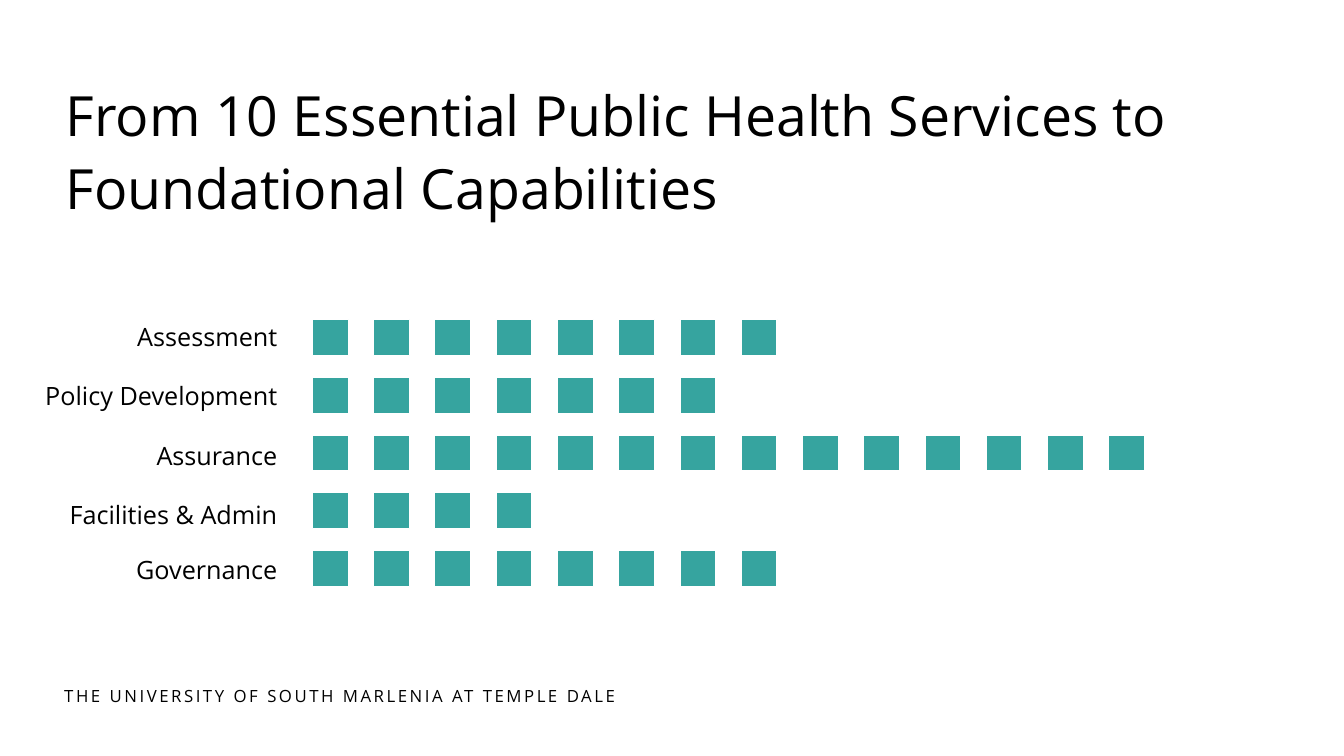
import pptx
import pptx.util
import pptx.dml.color
import pptx.enum.shapes
import pptx.enum.text

Cm = pptx.util.Cm
Pt = pptx.util.Pt
ALIGN = pptx.enum.text.PP_ALIGN
ANCHOR = pptx.enum.text.MSO_ANCHOR

COLORS = {"ink": "000000", "teal": "36A49F", "white": "FFFFFF"}
FONT = "Open Sans"

# label, number of squares, top of the label in cm
ROWS = [
    ("Assessment", 8, 7.98),
    ("Policy Development", 7, 9.47),
    ("Assurance", 14, 10.97),
    ("Facilities & Admin", 4, 12.45),
    ("Governance", 8, 13.84),
]
LEFT, TOP, SIDE = 7.87, 8.05, 0.91
STEP_X = 20.07 / 13
STEP_Y = 5.82 / 4


def color(name):
    return pptx.dml.color.RGBColor.from_string(COLORS[name])


def write(frame, text, size=18, align=ALIGN.LEFT, anchor=ANCHOR.TOP,
          leading=1.0, track=None):
    """Fill a text frame; track is the letter spacing in points."""
    frame.word_wrap = True
    frame.auto_size = pptx.enum.text.MSO_AUTO_SIZE.NONE
    frame.vertical_anchor = anchor
    par = frame.paragraphs[0]
    par.alignment = align
    par.line_spacing = leading
    run = par.add_run()
    run.text = text
    run.font.name = FONT
    run.font.size = Pt(size)
    run.font.color.rgb = color("ink")
    if track:
        run.font._element.set("spc", str(round(track * 100)))


class Deck:
    def __init__(self):
        self.file = pptx.Presentation()
        self.file.slide_width = Cm(33.87)
        self.file.slide_height = Cm(19.05)
        self.slide = self.file.slides.add_slide(self.file.slide_layouts[5])

    def title(self, text, x, y, w, h, **style):
        head = self.slide.shapes.title
        head.left, head.top, head.width, head.height = map(Cm, (x, y, w, h))
        write(head.text_frame, text, **style)

    def label(self, text, x, y, w, h, **style):
        box = self.slide.shapes.add_textbox(*map(Cm, (x, y, w, h)))
        write(box.text_frame, text, **style)

    def square(self, x, y, side):
        kind = pptx.enum.shapes.MSO_SHAPE.RECTANGLE
        box = self.slide.shapes.add_shape(kind, *map(Cm, (x, y, side, side)))
        box.shadow.inherit = False
        box.fill.solid()
        box.fill.fore_color.rgb = color("teal")
        box.line.color.rgb = color("white")
        box.line.width = Pt(1)


def main():
    deck = Deck()
    deck.title("From 10 Essential Public Health Services to Foundational Capabilities",
               1.4, 2.26, 31.09, 2.9, size=39.6, anchor=ANCHOR.MIDDLE, leading=1.1)
    for row, (name, count, top) in enumerate(ROWS):
        deck.label(name, 0.76, top, 6.48, 1.02, align=ALIGN.RIGHT)
        for col in range(count):
            deck.square(LEFT + col * STEP_X, TOP + row * STEP_Y, SIDE)
    deck.label("THE UNIVERSITY OF SOUTH MARLENIA AT TEMPLE DALE",
               1.37, 17.15, 17.96, 0.76, size=12, track=1.8)
    deck.file.save("out.pptx")


if __name__ == "__main__":
    main()
